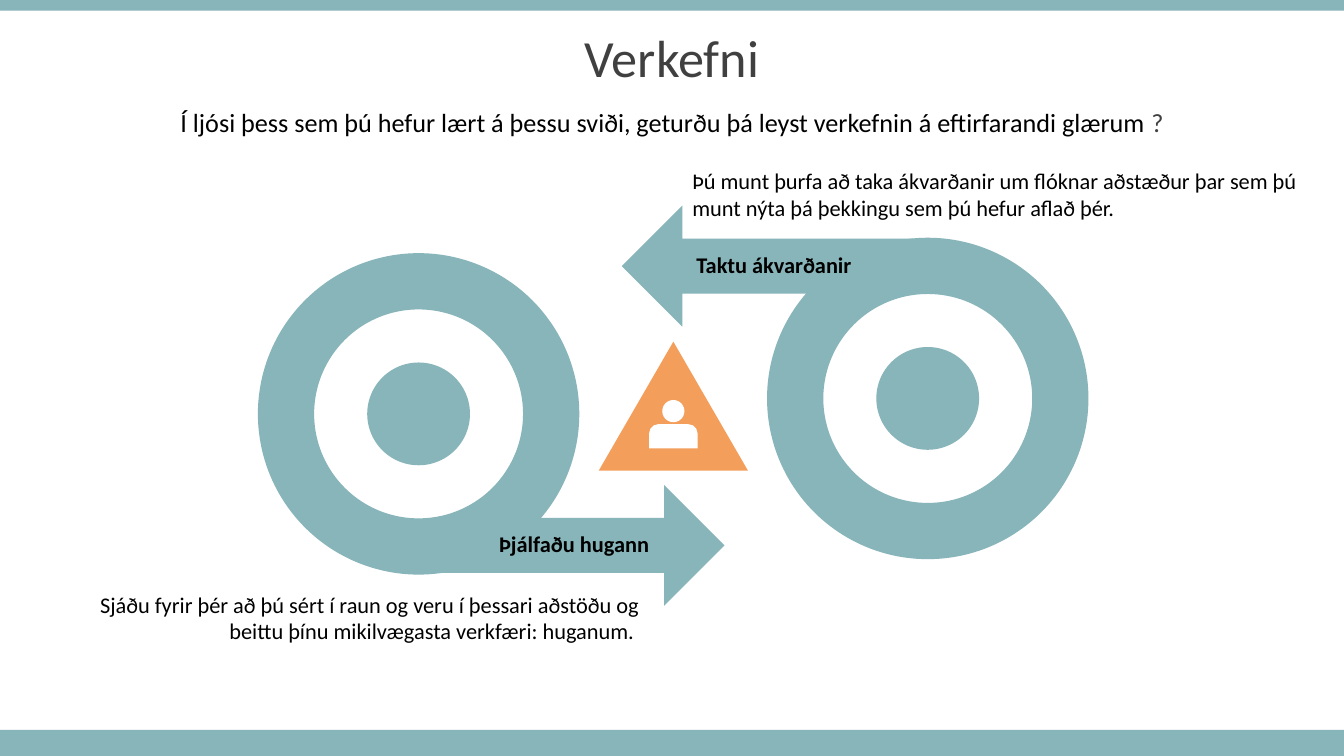
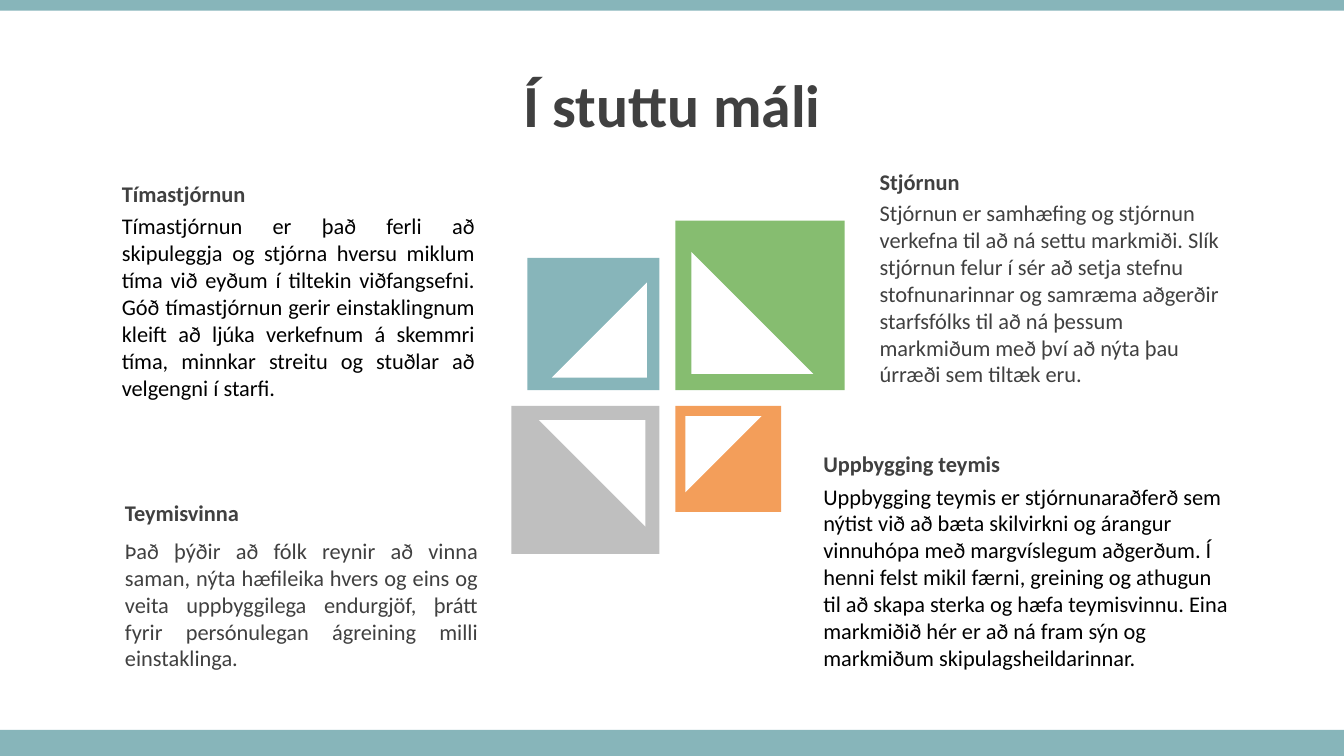
from pptx import Presentation
from pptx.dml.color import RGBColor
from pptx.enum.shapes import MSO_SHAPE as Preset
from pptx.enum.text import MSO_ANCHOR as Anchor, PP_ALIGN as Align
from pptx.util import Cm, Pt

COLOURS = {
    "teal": "87B5BA",
    "orange": "F39E5A",
    "green": "86BD70",
    "grey": "BFBFBF",
    "white": "FFFFFF",
    "slate": "404040",
    "black": "000000",
}
FONT = "Calibri"
WIDTH, HEIGHT = 33.87, 19.05
HEADLINE = {"align": Align.CENTER, "anchor": Anchor.MIDDLE, "before": 10, "spacing": 0.9}


def add_figure(slide, preset, left, top, width, height, colour, rotation=0, adjust=()):
    figure = slide.shapes.add_shape(preset, Cm(left), Cm(top), Cm(width), Cm(height))
    figure.shadow.inherit = False
    figure.fill.solid()
    figure.fill.fore_color.rgb = RGBColor.from_string(COLOURS[colour])
    figure.line.fill.background()
    figure.rotation = rotation
    for index, value in enumerate(adjust):
        figure.adjustments[index] = value
    return figure


def add_text(slide, text, left, top, width, height, size=16, colour="black", bold=False,
             align=Align.LEFT, anchor=Anchor.TOP, before=0, spacing=1.0, ending=""):
    frame = slide.shapes.add_textbox(Cm(left), Cm(top), Cm(width), Cm(height)).text_frame
    frame.word_wrap = True
    frame.vertical_anchor = anchor
    paragraph = frame.paragraphs[0]
    paragraph.alignment = align
    paragraph.space_before = Pt(before)
    paragraph.line_spacing = spacing
    for words, shade in ((text, colour), (ending, "slate")):
        if words:
            run = paragraph.add_run()
            run.text = words
            run.font.name = FONT
            run.font.size = Pt(size)
            run.font.bold = bold
            run.font.color.rgb = RGBColor.from_string(COLOURS[shade])


deck = Presentation()
deck.slide_width, deck.slide_height = Cm(WIDTH), Cm(HEIGHT)
blank = deck.slide_layouts[6]
for placeholder in list(blank.placeholders):
    placeholder.element.getparent().remove(placeholder.element)

task = deck.slides.add_slide(blank)
bands = [add_figure(task, Preset.RECTANGLE, 0, top, WIDTH, height, "teal")
         for top, height in ((HEIGHT - 0.66, 0.66), (0, 0.27))]
for band in bands:
    blank.shapes.element.append(band.element)

add_text(task, "Verkefni", 0, 0.46, WIDTH, 2.13, size=37.3, colour="slate", **HEADLINE)
add_text(task, "Í ljósi þess sem þú hefur lært á þessu sviði, geturðu þá leyst verkefnin á eftirfarandi glærum ",
         0, 2.59, WIDTH, 1.07, size=18.7, ending="?", **HEADLINE)

ring, core = 8.1, 2.59
core_offset = (ring - core) / 2
for ring_left, ring_top, arrow_left, arrow_top, turn in (
    (6.5, 6.38, 10.92, 12.22, 0),
    (19.33, 5.99, 15.67, 5.18, 180),
):
    add_figure(task, Preset.DONUT, ring_left, ring_top, ring, ring, "teal", turn, (0.175,))
    add_figure(task, Preset.RIGHT_ARROW, arrow_left, arrow_top, 7.34, 3.05, "teal", turn, (0.455, 0.5))
    add_figure(task, Preset.OVAL, ring_left + core_offset, ring_top + core_offset, core, core, "teal")

add_figure(task, Preset.ISOSCELES_TRIANGLE, 15.09, 8.61, 3.76, 3.25, "orange")
add_figure(task, Preset.OVAL, 16.69, 10.08, 0.56, 0.56, "white")
add_figure(task, Preset.ROUND_2_SAME_RECTANGLE, 16.36, 10.69, 1.22, 0.61, "white", adjust=(0.375, 0))

add_text(task, "Þú munt þurfa að taka ákvarðanir um flóknar aðstæður þar sem þú munt nýta þá "
         "þekkingu sem þú hefur aflað þér.", 17.2, 4.09, 16, 1.63)
add_text(task, "Sjáðu fyrir þér að þú sért í raun og veru í þessari aðstöðu og beittu þínu "
         "mikilvægasta verkfæri: huganum. ", 1.42, 14.76, 14.94, 1.63, align=Align.RIGHT)
add_text(task, "Þjálfaðu hugann", 7.95, 13.23, 8.66, 0.94, bold=True, align=Align.RIGHT)
add_text(task, "Taktu ákvarðanir", 17.3, 6.2, 8.66, 0.94, bold=True)

summary = deck.slides.add_slide(blank)
add_text(summary, "Í stuttu máli", 0, 1.65, WIDTH, 2.13, size=42.7, colour="slate", bold=True, **HEADLINE)

hub_x, hub_y, half_gap = 16.82, 10.03, 0.2
for colour, side, is_right, is_lower, turn in (
    ("teal", 3.33, False, False, 270),
    ("green", 4.27, True, False, 0),
    ("orange", 2.67, True, True, 90),
    ("grey", 3.73, False, True, 180),
):
    for preset, extent, reach, fill, rotation in (
        (Preset.RECTANGLE, side, half_gap, colour, 0),
        (Preset.RIGHT_TRIANGLE, side * 0.72, half_gap + side * 0.095, "white", turn),
    ):
        left = hub_x + (reach if is_right else -reach - extent)
        top = hub_y + (reach if is_lower else -reach - extent)
        add_figure(summary, preset, left, top, extent, extent, fill, rotation)

topics = (
    ("Tímastjórnun", 2.82, 4.42, 9.4, 5.23, 5.74, "black", Align.JUSTIFY,
     "Tímastjórnun er það ferli að skipuleggja og stjórna hversu miklum tíma við eyðum í tiltekin "
     "viðfangsefni. Góð tímastjórnun gerir einstaklingnum kleift að ljúka verkefnum á skemmri tíma, "
     "minnkar streitu og stuðlar að velgengni í starfi. "),
    ("Teymisvinna", 2.9, 12.45, 9.4, 13.41, 3.68, "slate", Align.JUSTIFY,
     "Það þýðir að fólk reynir að vinna saman, nýta hæfileika hvers og eins og veita uppbyggilega "
     "endurgjöf, þrátt fyrir persónulegan ágreining milli einstaklinga. "),
    ("Stjórnun", 21.92, 4.11, 9.4, 4.9, 5.05, "slate", Align.LEFT,
     "Stjórnun er samhæfing og stjórnun verkefna til að ná settu markmiði. Slík stjórnun felur í sér "
     "að setja stefnu stofnunarinnar og samræma aðgerðir starfsfólks til að ná þessum markmiðum með "
     "því að nýta þau úrræði sem tiltæk eru."),
    ("Uppbygging teymis", 20.5, 11.23, 10.85, 12.04, 5.05, "black", Align.LEFT,
     "Uppbygging teymis er stjórnunaraðferð sem nýtist við að bæta skilvirkni og árangur vinnuhópa "
     "með margvíslegum aðgerðum. Í henni felst mikil færni, greining og athugun til að skapa sterka "
     "og hæfa teymisvinnu. Eina markmiðið hér er að ná fram sýn og markmiðum skipulagsheildarinnar."),
)
for heading, left, heading_top, width, body_top, body_height, colour, align, body in topics:
    add_text(summary, body, left, body_top, width, body_height, colour=colour, align=align)
    add_text(summary, heading, left, heading_top, width, 0.94, colour="slate", bold=True)

deck.save("out.pptx")
